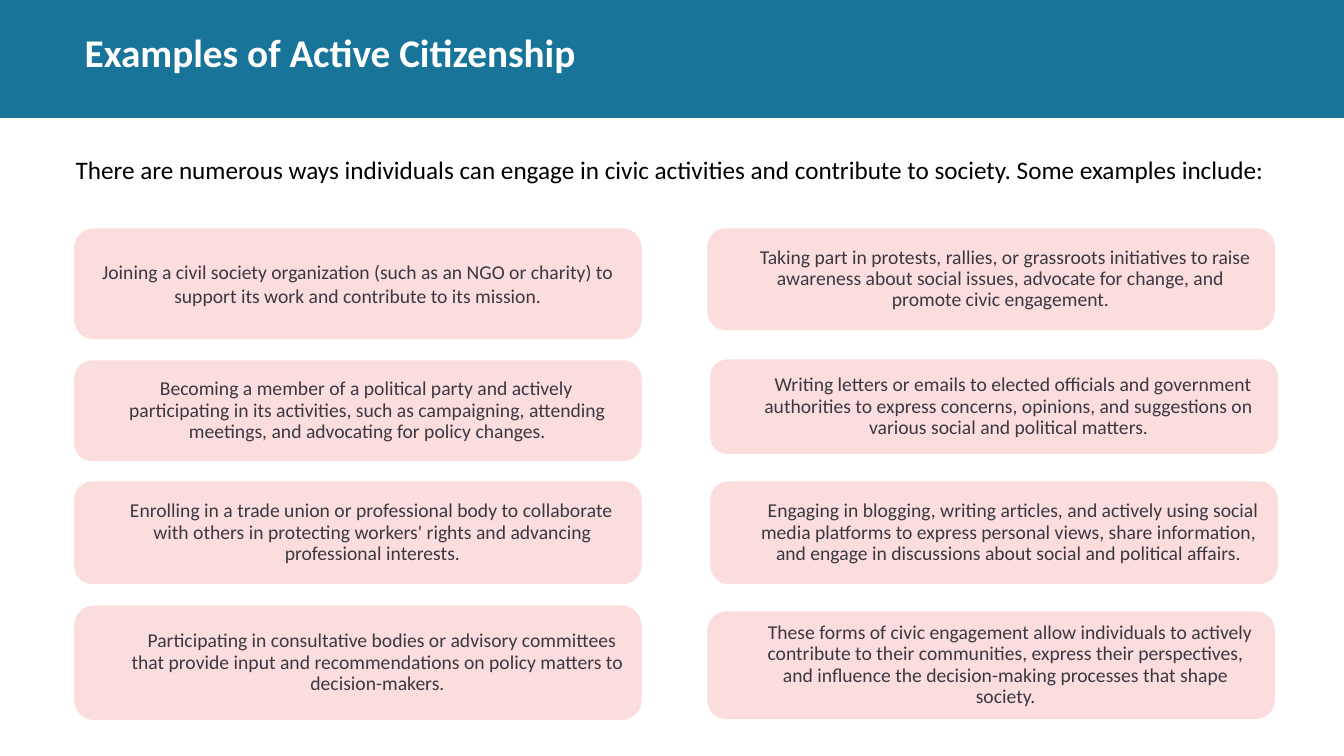
import dataclasses

import lxml.etree
import pptx
import pptx.dml.color
import pptx.enum.shapes
import pptx.enum.text
import pptx.oxml.ns
import pptx.util

Inches = pptx.util.Inches
Pt = pptx.util.Pt
Shape = pptx.enum.shapes.MSO_SHAPE
Align = pptx.enum.text.PP_ALIGN
Anchor = pptx.enum.text.MSO_ANCHOR
Fit = pptx.enum.text.MSO_AUTO_SIZE

HUES = {"band": "187498", "card": "FBDDDD", "ink": "3B3842", "white": "FFFFFF", "black": "000000"}
WIDTH = 13.33


@dataclasses.dataclass
class Style:
    size: int
    hue: str
    align: Align
    anchor: Anchor
    fit: Fit
    bold: bool = False


@dataclasses.dataclass
class Card:
    left: float
    top: float
    height: float
    words: str
    margin: float = 0.29
    indent: float = 0.09
    pitch: float = 0.9
    before: int = 10


HEAD = Style(28, "white", Align.LEFT, Anchor.TOP, Fit.SHAPE_TO_FIT_TEXT, True)
LEAD = Style(18, "black", Align.JUSTIFY, Anchor.TOP, Fit.SHAPE_TO_FIT_TEXT)
NOTE = Style(14, "ink", Align.CENTER, Anchor.MIDDLE, Fit.NONE)

CARDS = [
    Card(0.75, 2.28, 1.07, "Joining a civil society organization (such as an NGO or charity) to support its work and contribute to its mission.", 0, 0, 1.0, 0),
    Card(0.75, 3.59, 0.97, "Becoming a member of a political party and actively participating in its activities, such as campaigning, attending meetings, and advocating for policy changes.", 0.19, -0.02),
    Card(0.75, 4.79, 0.99, "Enrolling in a trade union or professional body to collaborate with others in protecting workers' rights and advancing professional interests.", 0.29, -0.02),
    Card(0.75, 6.02, 1.11, "Participating in consultative bodies or advisory committees that provide input and recommendations on policy matters to decision-makers.", 0.39),
    Card(7.03, 2.28, 0.98, "Taking part in protests, rallies, or grassroots initiatives to raise awareness about social issues, advocate for change, and promote civic engagement.", 0.19),
    Card(7.06, 3.58, 0.91, "Writing letters or emails to elected officials and government authorities to express concerns, opinions, and suggestions on various social and political matters."),
    Card(7.06, 4.79, 0.99, "Engaging in blogging, writing articles, and actively using social media platforms to express personal views, share information, and engage in discussions about social and political affairs."),
    Card(7.03, 6.08, 1.04, "These forms of civic engagement allow individuals to actively contribute to their communities, express their perspectives, and influence the decision-making processes that shape society."),
]


def tint(name: str) -> pptx.dml.color.RGBColor:
    return pptx.dml.color.RGBColor.from_string(HUES[name])


def apply(target, values: dict) -> None:
    for name, value in values.items():
        setattr(target, name, value)


def place(shape, left: float, top: float, width: float, height: float) -> None:
    apply(shape, {"left": Inches(left), "top": Inches(top),
                  "width": Inches(width), "height": Inches(height)})


def write(shape, words: str, style: Style, margin: float, indent: float,
          pitch: float = 0.9, before: int = 0) -> None:
    frame = shape.text_frame
    frame.text = words
    apply(frame, {"word_wrap": True, "auto_size": style.fit, "vertical_anchor": style.anchor})
    para = frame.paragraphs[0]
    apply(para, {"alignment": style.align, "line_spacing": pitch, "space_before": Pt(before)})
    props = para._p.get_or_add_pPr()
    props.set("marL", str(Inches(margin)))
    props.set("indent", str(Inches(indent)))
    lxml.etree.SubElement(props, pptx.oxml.ns.qn("a:buNone"))
    font = para.runs[0].font
    apply(font, {"name": "Calibri", "size": Pt(style.size), "bold": style.bold})
    font.color.rgb = tint(style.hue)


def block(slide, kind: Shape, hue: str, left: float, top: float, width: float, height: float):
    shape = slide.shapes.add_shape(kind, Inches(left), Inches(top), Inches(width), Inches(height))
    shape.shadow.inherit = False
    shape.fill.solid()
    shape.fill.fore_color.rgb = tint(hue)
    shape.line.color.rgb = tint(hue)
    shape.line.width = Pt(2)
    return shape


def main() -> None:
    deck = pptx.Presentation()
    apply(deck, {"slide_width": Inches(WIDTH), "slide_height": Inches(7.5)})
    slide = deck.slides.add_slide(deck.slide_layouts[1])

    band = block(slide, Shape.RECTANGLE, "band", 0, 0, WIDTH, 1.17)
    band.line.fill.background()
    slide.shapes.element.insert(2, band.element)

    title = slide.shapes.title
    place(title, 0.49, 0.28, 6.57, 0.53)
    write(title, "Examples of Active Citizenship", HEAD, 0.5, -0.25)

    lead = slide.placeholders[1]
    place(lead, 0.4, 1.51, 12.44, 0.37)
    write(lead, "There are numerous ways individuals can engage in civic activities and contribute to society. Some examples include:",
          LEAD, 0.5, -0.25, before=10)

    for card in CARDS:
        shape = block(slide, Shape.ROUNDED_RECTANGLE, "card", card.left, card.top, 5.6, card.height)
        write(shape, card.words, NOTE, card.margin, card.indent, card.pitch, card.before)

    deck.save("out.pptx")


if __name__ == "__main__":
    main()
